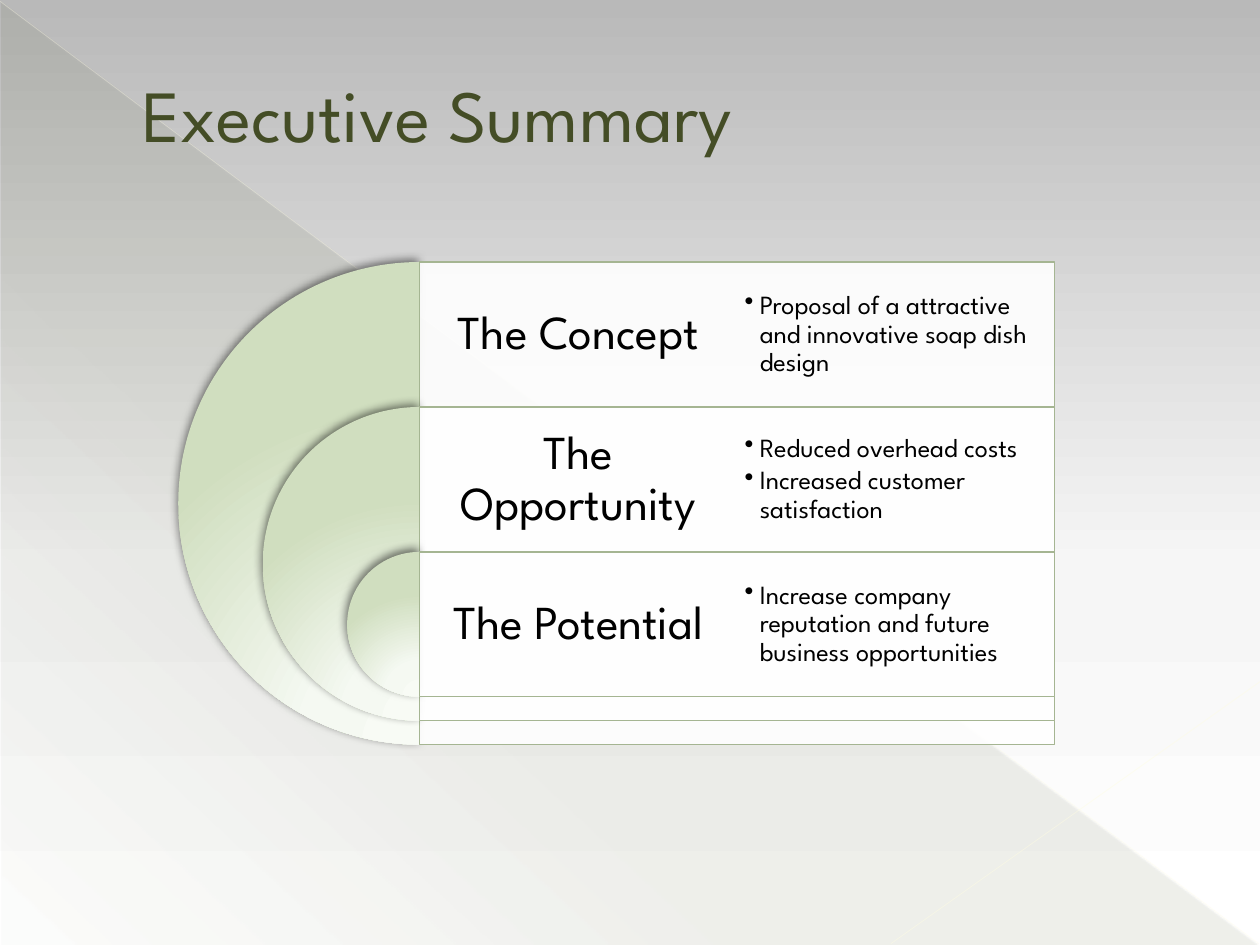
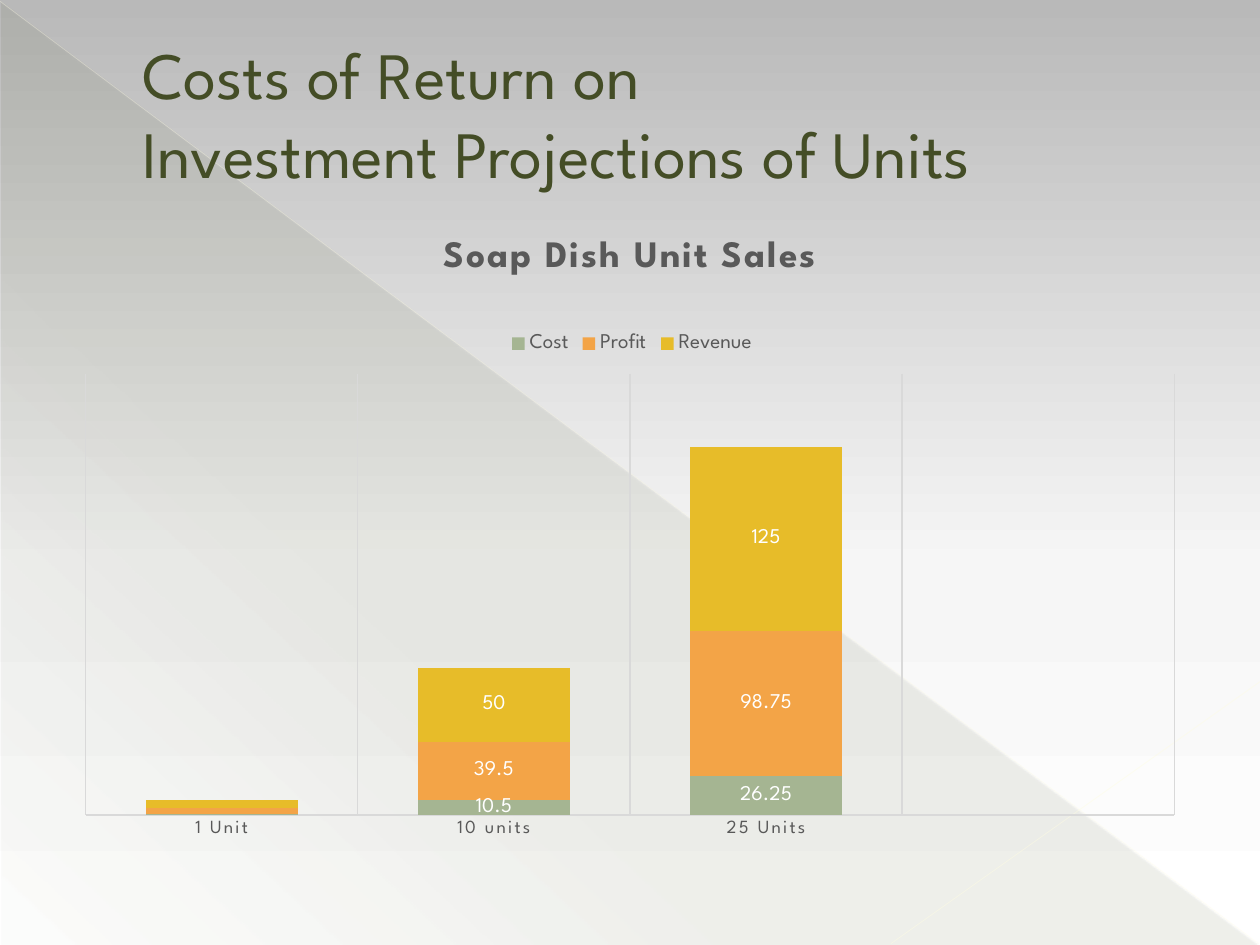
"""Build the executive summary and unit sales slides of a soap dish proposal."""
from dataclasses import dataclass
from typing import Any, Optional

from lxml.etree import SubElement
from pptx import Presentation
from pptx.chart.data import CategoryChartData
from pptx.dml.color import RGBColor
from pptx.enum.chart import XL_CHART_TYPE as ChartType
from pptx.enum.chart import XL_LABEL_POSITION as LabelPosition
from pptx.enum.chart import XL_LEGEND_POSITION as LegendPosition
from pptx.enum.chart import XL_TICK_MARK as TickMark
from pptx.enum.shapes import MSO_CONNECTOR as Connector
from pptx.enum.shapes import MSO_SHAPE as Preset
from pptx.enum.text import MSO_ANCHOR as Anchor
from pptx.enum.text import PP_ALIGN as Align
from pptx.oxml.ns import qn
from pptx.util import Inches, Pt

FONT = "League Spartan"
BLACK = RGBColor(0x00, 0x00, 0x00)
WHITE = RGBColor(0xFF, 0xFF, 0xFF)
SILVER = RGBColor(0xB9, 0xB9, 0xB9)
MIST = RGBColor(0xF6, 0xF6, 0xF6)
OLIVE = RGBColor(0x44, 0x4D, 0x26)
CREAM = RGBColor(0xFF, 0xFD, 0xE3)
PALE_LEAF = RGBColor(0xF8, 0xFB, 0xF5)
SOFT_LEAF = RGBColor(0xF5, 0xF9, 0xF2)
LEAF = RGBColor(0xD0, 0xDE, 0xBF)
SAGE = RGBColor(0xA5, 0xB5, 0x92)
ORANGE = RGBColor(0xF3, 0xA4, 0x47)
GOLD = RGBColor(0xE7, 0xBC, 0x29)
GREY = RGBColor(0x59, 0x59, 0x59)
LIGHT_GREY = RGBColor(0xD9, 0xD9, 0xD9)

COLUMNS, ROWS = 100, 75
CELL = Inches(0.1)
LETTER_SPACING = "133"


@dataclass(frozen=True)
class Area:
    """A rectangle counted in grid columns and rows."""
    column: float
    row: float
    columns: float
    rows: float

    def box(self) -> tuple[int, ...]:
        return tuple(grid(n) for n in (self.column, self.row, self.columns, self.rows))


@dataclass(frozen=True)
class Stop:
    """A gradient stop with its place and opacity in percent."""
    place: int
    color: RGBColor
    opacity: int = 100


@dataclass(frozen=True)
class Gradient:
    """Stops along an angle, or around a circle when no angle is given."""
    stops: tuple[Stop, ...]
    angle: Optional[int] = None


@dataclass(frozen=True)
class Ray:
    """A thin translucent line across the backdrop."""
    start: tuple[float, float]
    end: tuple[float, float]
    width: float
    opacity: int


@dataclass(frozen=True)
class Tier:
    """One heading of the summary with its points."""
    heading: str
    points: tuple[str, ...]


@dataclass(frozen=True)
class Measure:
    """One chart series."""
    name: str
    values: tuple[Optional[float], ...]
    color: RGBColor


BACKDROP = Gradient((Stop(0, SILVER), Stop(60, MIST), Stop(100, WHITE)), 90)
SHADE = Gradient((Stop(0, OLIVE, 10), Stop(70, OLIVE, 8), Stop(100, OLIVE, 1)), 133)
DISC = Gradient((Stop(0, PALE_LEAF), Stop(34, SOFT_LEAF), Stop(100, LEAF)))
RAYS = (
    Ray((0, 0.1), (99.9, 74.9), 0.39, 35),
    Ray((COLUMNS, 54.1), (70.7, 74.9), 0.47, 45),
)
TITLE_AREA = Area(5, 2.9, 90, 12.1)
CHART_AREA = Area(5, 16.7, 90, 50.8)

TIER_TOP, TIER_ROWS, DISC_STEP = 20.8, 11.5, 13.4
PANEL_LEFT, PANEL_COLUMNS = 33.3, 50.4
TIERS = (
    Tier("The Concept", ("Proposal of a attractive and innovative soap dish design",)),
    Tier("The Opportunity", ("Reduced overhead costs", "Increased customer satisfaction")),
    Tier("The Potential", ("Increase company reputation and future business opportunities",)),
)
UNITS = ("1 Unit", "10 units", "25 Units", "")
MEASURES = (
    Measure("Cost", (1.05, 10.5, 26.25, None), SAGE),
    Measure("Profit", (3.95, 39.5, 98.75, None), ORANGE),
    Measure("Revenue", (5, 50, 125, None), GOLD),
)


def grid(cells: float) -> int:
    return round(cells * CELL)


def set_format(target: Any, **values: Any) -> None:
    for name, value in values.items():
        setattr(target, name, value)


def set_font(font: Any, size: float, color: RGBColor, bold: bool = False) -> None:
    set_format(font, name=FONT, size=Pt(size), bold=bold)
    font.color.rgb = color


def set_line(line: Any, color: RGBColor, width: float) -> None:
    line.color.rgb = color
    line.width = Pt(width)


def add_node(parent: Any, tag: str, **attributes: Any) -> Any:
    return SubElement(parent, qn(tag), {key: str(value) for key, value in attributes.items()})


def set_opacity(parent: Any, percent: int) -> None:
    color = next(parent.iter(qn("a:srgbClr")))
    add_node(color, "a:alpha", val=percent * 1000)


def paint_gradient(owner: Any, gradient: Gradient) -> None:
    """Replace the owner's solid fill with a gradient."""
    solid = owner.find(qn("a:solidFill"))
    fill = add_node(owner, "a:gradFill", rotWithShape=1)
    owner.replace(solid, fill)
    stop_list = add_node(fill, "a:gsLst")
    for stop in gradient.stops:
        node = add_node(stop_list, "a:gs", pos=stop.place * 1000)
        add_node(node, "a:srgbClr", val=stop.color)
        if stop.opacity < 100:
            set_opacity(node, stop.opacity)
    if gradient.angle is not None:
        add_node(fill, "a:lin", ang=gradient.angle * 60000, scaled=0)
    else:
        circle = add_node(fill, "a:path", path="circle")
        add_node(circle, "a:fillToRect", l=50000, t=155000, r=50000, b=-55000)


def add_filled_shape(slide: Any, preset: Any, area: Area, color: RGBColor = WHITE) -> Any:
    shape = slide.shapes.add_shape(preset, *area.box())
    shape.shadow.inherit = False
    shape.fill.solid()
    shape.fill.fore_color.rgb = color
    shape.line.fill.background()
    return shape


def add_text(slide: Any, area: Area, texts: tuple[str, ...], size: float, color: RGBColor,
             inset: Optional[float] = None, align: Any = Align.LEFT) -> Any:
    frame = slide.shapes.add_textbox(*area.box()).text_frame
    set_format(frame, word_wrap=True, vertical_anchor=Anchor.MIDDLE)
    if inset is not None:
        for side in ("left", "top", "right", "bottom"):
            setattr(frame, f"margin_{side}", Inches(inset))
    for index, text in enumerate(texts):
        paragraph = frame.add_paragraph() if index else frame.paragraphs[0]
        paragraph.text = text
        paragraph.alignment = align
        for run in paragraph.runs:
            set_font(run.font, size, color)
    return frame


def indent(paragraph: Any, left: float, first: float = 0) -> Any:
    properties = paragraph._p.get_or_add_pPr()
    properties.set("marL", str(Inches(left)))
    properties.set("indent", str(Inches(first)))
    return properties


def add_backdrop(slide: Any) -> None:
    fill = slide.background.fill
    fill.solid()
    fill.fore_color.rgb = WHITE
    paint_gradient(next(slide.element.iter(qn("p:bgPr"))), BACKDROP)
    triangle = add_filled_shape(slide, Preset.RIGHT_TRIANGLE, Area(0.1, 0.2, 99.8, 74.8))
    paint_gradient(triangle.element.spPr, SHADE)
    for ray in RAYS:
        ends = [grid(cells) for cells in ray.start + ray.end]
        connector = slide.shapes.add_connector(Connector.STRAIGHT, *ends)
        set_line(connector.line, CREAM, ray.width)
        set_opacity(connector.element.spPr, ray.opacity)
        add_node(connector.element.spPr, "a:effectLst")


def add_titled_slide(presentation: Any, title: str, size: float) -> Any:
    slide = presentation.slides.add_slide(presentation.slide_layouts[6])
    add_backdrop(slide)
    frame = add_text(slide, TITLE_AREA, (title,), size, OLIVE)
    indent(frame.paragraphs[0], 0.53)
    return slide


def add_tier(slide: Any, tier: Tier, index: int) -> None:
    top = TIER_TOP + index * TIER_ROWS
    size = TIER_ROWS + (len(TIERS) - 1 - index) * DISC_STEP
    disc = add_filled_shape(slide, Preset.PIE, Area(PANEL_LEFT - size / 2, top, size, size))
    for position, angle in enumerate((54, 162)):
        disc.adjustments[position] = angle
    paint_gradient(disc.element.spPr, DISC)
    effects = disc.element.spPr.find(qn("a:effectLst"))
    shadow = add_node(effects, "a:outerShdw", blurRad=Pt(5), dist=Pt(2),
                      dir=245 * 60000, rotWithShape=0)
    add_node(shadow, "a:srgbClr", val=BLACK)
    set_opacity(shadow, 50)

    panel = add_filled_shape(slide, Preset.RECTANGLE, Area(PANEL_LEFT, top, PANEL_COLUMNS, size))
    set_opacity(panel.element.spPr, 90)
    set_line(panel.line, SAGE, 0.75)

    half = PANEL_COLUMNS / 2
    heading = add_text(slide, Area(PANEL_LEFT, top, half, TIER_ROWS), (tier.heading,),
                       27, BLACK, 0.11, Align.CENTER)
    heading.paragraphs[0].line_spacing = 0.9
    points = add_text(slide, Area(PANEL_LEFT + half, top, half, TIER_ROWS), tier.points,
                      15, BLACK, 0.06)
    for paragraph in points.paragraphs:
        set_format(paragraph, line_spacing=0.9, space_after=Pt(2.25))
        add_node(indent(paragraph, 0.12, -0.12), "a:buChar", char="•")


def place_part(part: Any, **shares: Any) -> None:
    """Put a chart part at shares of the chart's size."""
    layout = part.find(qn("c:layout"))
    if layout is None:
        layout = add_node(part, "c:layout")
        anchor = part.find(qn("c:legendPos"))
        part.insert(0 if anchor is None else part.index(anchor) + 1, layout)
    manual = add_node(layout, "c:manualLayout")
    if "w" in shares:
        add_node(manual, "c:layoutTarget", val="inner")
    for axis in "xy":
        add_node(manual, f"c:{axis}Mode", val="edge")
    for name, share in shares.items():
        add_node(manual, f"c:{name}", val=share)


def add_sales_chart(slide: Any) -> None:
    data = CategoryChartData()
    data.categories = UNITS
    for measure in MEASURES:
        data.add_series(measure.name, measure.values)
    chart = slide.shapes.add_chart(ChartType.COLUMN_STACKED, *CHART_AREA.box(), data).chart
    set_font(chart.font, 10, BLACK)
    set_format(chart, has_title=True, has_legend=True)
    title = chart.chart_title.text_frame
    title.text = "Soap Dish Unit Sales"
    set_font(title.paragraphs[0].runs[0].font, 21.3, GREY, bold=True)
    set_format(chart.legend, position=LegendPosition.TOP, include_in_layout=False)
    set_font(chart.legend.font, 12, GREY)

    set_format(chart.value_axis, visible=False, has_major_gridlines=False,
               minimum_scale=0, maximum_scale=300)
    axis = chart.category_axis
    set_format(axis, has_major_gridlines=True, major_tick_mark=TickMark.NONE)
    for line in (axis.format.line, axis.major_gridlines.format.line):
        set_line(line, LIGHT_GREY, 0.75)
    set_font(axis.tick_labels.font, 10.6, GREY)

    plot = chart.plots[0]
    set_format(plot, gap_width=79, overlap=100, vary_by_categories=False)
    for series, measure in zip(plot.series, MEASURES):
        series.format.fill.solid()
        series.format.fill.fore_color.rgb = measure.color
        set_format(series.data_labels, show_value=True, position=LabelPosition.CENTER)
        set_font(series.data_labels.font, 12, WHITE)

    root = chart.element
    for labels in root.iter(qn("c:dLbls")):
        hidden = add_node(labels, "c:dLbl")
        add_node(hidden, "c:idx", val=0)
        add_node(hidden, "c:delete", val=1)
        labels.insert(0, hidden)
    for part, tag in (("c:title", "a:rPr"), ("c:catAx", "a:defRPr")):
        next(next(root.iter(qn(part))).iter(qn(tag))).set("spc", LETTER_SPACING)
    place_part(next(root.iter(qn("c:plotArea"))), x=0.02, y=0.255, w=0.96, h=0.69)
    place_part(next(root.iter(qn("c:legend"))), x=0.39, y=0.185)


def main() -> None:
    presentation = Presentation()
    set_format(presentation, slide_width=grid(COLUMNS), slide_height=grid(ROWS))
    summary = add_titled_slide(presentation, "Executive Summary", 42)
    for index, tier in enumerate(TIERS):
        add_tier(summary, tier, index)
    add_sales_chart(add_titled_slide(
        presentation, "Costs of Return on\vInvestment Projections of Units", 37.8))
    presentation.save("out.pptx")


if __name__ == "__main__":
    main()
